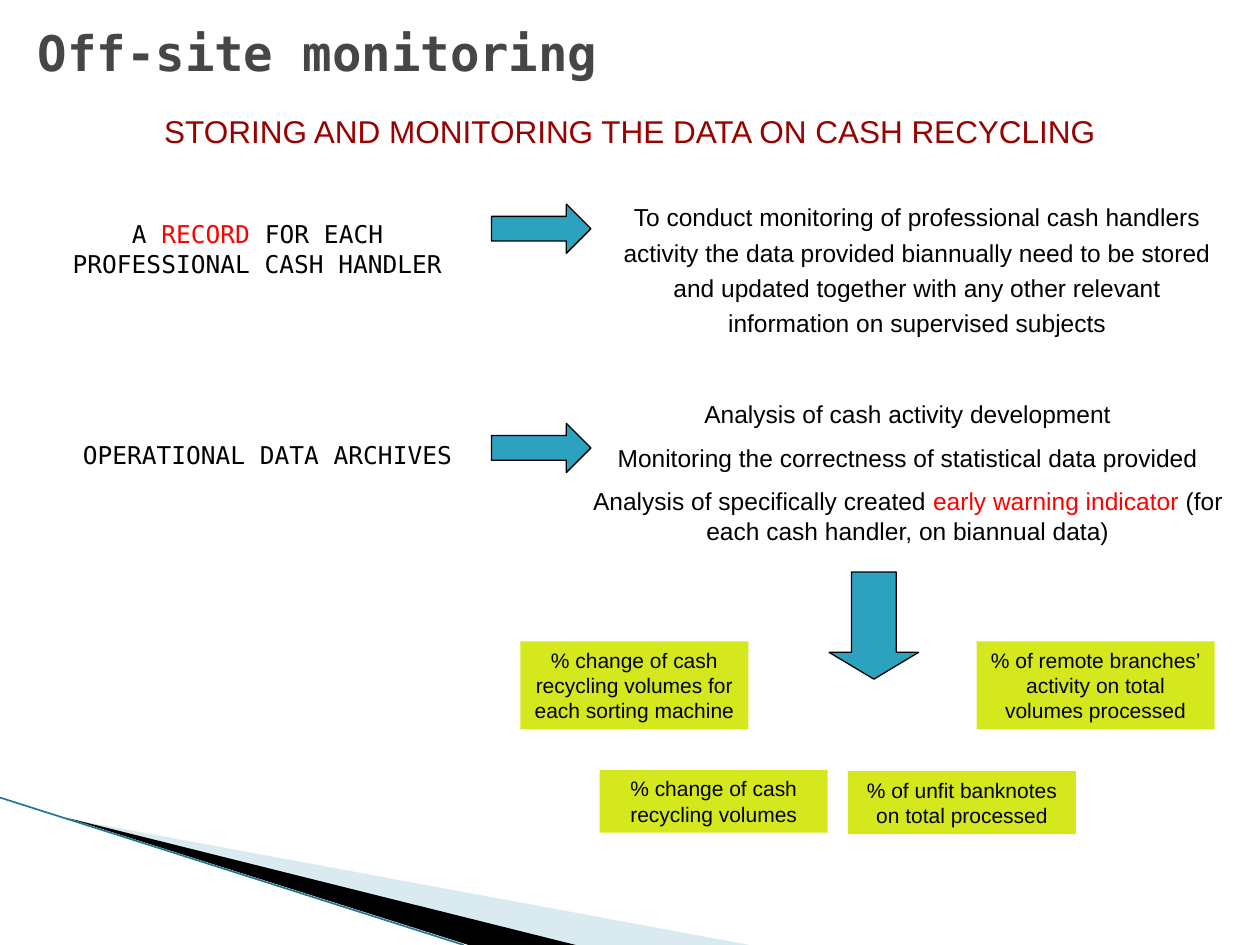
from lxml import etree
from pptx import Presentation
from pptx.dml.color import RGBColor
from pptx.enum.shapes import MSO_CONNECTOR, MSO_SHAPE
from pptx.enum.text import MSO_ANCHOR, MSO_AUTO_SIZE, PP_ALIGN
from pptx.oxml.ns import qn
from pptx.util import Inches, Pt

ARROW, RECTANGLE = MSO_SHAPE.RIGHT_ARROW, MSO_SHAPE.RECTANGLE
STRAIGHT = MSO_CONNECTOR.STRAIGHT
LEFT, CENTER = PP_ALIGN.LEFT, PP_ALIGN.CENTER
TOP, NO_AUTOFIT = MSO_ANCHOR.TOP, MSO_AUTO_SIZE.NONE

THEME = {
    "sans": "Arial", "mono": "DejaVu Sans Mono",
    "title": 28, "heading": 18, "body": 14, "label": 12,
    "gray": RGBColor.from_string("464646"),
    "maroon": RGBColor.from_string("990000"),
    "black": RGBColor.from_string("000000"),
    "red": RGBColor.from_string("FF0000"),
    "teal": RGBColor.from_string("2DA2BF"),
    "edge": RGBColor.from_string("1F7A8F"),
    "lime": RGBColor.from_string("D5E81E"),
    "pale": RGBColor.from_string("A0CBDC"),
}

presentation = Presentation()
presentation.slide_width, presentation.slide_height = Inches(10), Inches(7.5)
slide = presentation.slides.add_slide(presentation.slide_layouts[1])
shapes = slide.shapes

# Grid of 100 columns and 75 rows, with square cells
CELL = presentation.slide_width / 100


def grid(*cells):
    return [round(cell * CELL) for cell in cells]


def write(shape, paragraphs, size, font="sans", color="black", align=CENTER,
          bold=False, line_spacing=1.0):
    """Fill a shape with paragraphs, each a list of (text, color or None) runs."""
    frame = shape.text_frame
    frame.word_wrap, frame.auto_size = True, NO_AUTOFIT
    frame.vertical_anchor = TOP
    frame.margin_left = frame.margin_right = Inches(0.1)
    frame.margin_top = frame.margin_bottom = Inches(0.05)
    for index, runs in enumerate(paragraphs):
        paragraph = frame.add_paragraph() if index else frame.paragraphs[0]
        properties = paragraph._p.get_or_add_pPr()
        properties.set("marL", "0")
        properties.set("indent", "0")
        etree.SubElement(properties, qn("a:buNone"))
        paragraph.alignment = align
        paragraph.line_spacing = line_spacing
        paragraph.space_before = Pt(8 if index else 0)
        for text, run_color in runs:
            run = paragraph.add_run()
            run.text = text
            run.font.name, run.font.size = THEME[font], Pt(THEME[size])
            run.font.bold = bold
            run.font.color.rgb = THEME[run_color or color]


# Corner decoration: pale wedge, black wedge and edge line
wedges = [
    ("pale", 40, [(5.5, 65), (59.5, 75), (45.6, 75)]),
    ("black", 100, [(5.3, 64.9), (45.7, 75), (37.2, 75)]),
]
for color, opacity, points in wedges:
    start, *others = [grid(*point) for point in points]
    builder = shapes.build_freeform(*start)
    builder.add_line_segments(others, close=True)
    wedge = builder.convert_to_shape()
    wedge.shadow.inherit = False
    wedge.fill.solid()
    wedge.fill.fore_color.rgb = THEME[color]
    wedge.line.fill.background()
    if opacity < 100:
        color_element = wedge._element.spPr.find(qn("a:solidFill"))[0]
        etree.SubElement(color_element, qn("a:alpha"), val=str(opacity * 1000))

edge = shapes.add_connector(STRAIGHT, *grid(0, 63.3, 36.8, 75))
edge.line.color.rgb = THEME["edge"]
edge.line.width = Pt(0.95)
etree.SubElement(edge._element.spPr, qn("a:effectLst"))

# Title
title = shapes.title
title.left, title.top, title.width, title.height = grid(2, 1.3, 91.4, 5.7)
write(title, [[("Off-site monitoring", None)]], "title", "mono", "gray", LEFT, bold=True)

# Heading, the two sources and the purpose of the records
texts = [
    ((5.9, 8.4, 88.2, 4), "heading", "sans", "maroon", 1.0,
     [("STORING AND MONITORING THE DATA ON CASH RECYCLING", None)]),
    ((4.3, 16.9, 32.3, 5.7), "body", "mono", "black", 1.0,
     [("A", None), (" RECORD", "red"), (" FOR EACH PROFESSIONAL CASH HANDLER", None)]),
    ((5.1, 34.4, 32.3, 3.3), "body", "mono", "black", 1.0,
     [("OPERATIONAL DATA ARCHIVES", None)]),
    ((47.6, 15.1, 50.4, 12.2), "body", "sans", "black", 1.2,
     [("To conduct monitoring of professional cash handlers activity the data "
       "provided biannually need to be stored and updated together with any "
       "other relevant information on supervised subjects", None)]),
]
for cells, size, font, color, spacing, runs in texts:
    box = shapes.add_textbox(*grid(*cells))
    write(box, [runs], size, font, color, line_spacing=spacing)

# Analyses made on the archives
body = slide.placeholders[1]
body.left, body.top, body.width, body.height = grid(45.3, 31.2, 53.5, 12.6)
write(body, [
    [("Analysis of cash activity development", None)],
    [("Monitoring the correctness of statistical data provided", None)],
    [("Analysis of specifically created ", None), ("early warning indicator", "red"),
     (" (for each cash handler, on biannual data)", None)],
], "body")

# Arrows: two to the right, one turned down to the indicators
arrows = [
    ((39, 16.2, 7.9, 3.9), 0, 0.5),
    ((39, 33.6, 7.9, 3.9), 0, 0.5),
    ((65.1, 46.1, 8.5, 7.1), 90, 0.3),
]
for cells, rotation, head in arrows:
    arrow = shapes.add_shape(ARROW, *grid(*cells))
    arrow.shadow.inherit = False
    arrow.rotation = rotation
    arrow.adjustments[1] = head
    arrow.fill.solid()
    arrow.fill.fore_color.rgb = THEME["teal"]
    arrow.line.color.rgb = THEME["black"]
    arrow.line.width = Pt(0.75)

# Early warning indicators
indicators = [
    ((41.3, 50.9, 18.1, 7), "% change of cash recycling volumes for each sorting machine"),
    ((47.6, 61.1, 18.1, 5), "% change of cash recycling volumes"),
    ((67.3, 61.2, 18.1, 5), "% of unfit banknotes on total processed"),
    ((77.5, 50.9, 18.9, 7), "% of remote branches’ activity on total volumes processed"),
]
for cells, text in indicators:
    indicator = shapes.add_shape(RECTANGLE, *grid(*cells))
    indicator.shadow.inherit = False
    indicator.fill.solid()
    indicator.fill.fore_color.rgb = THEME["lime"]
    indicator.line.fill.background()
    write(indicator, [[(text, None)]], "label")

presentation.save("out.pptx")
